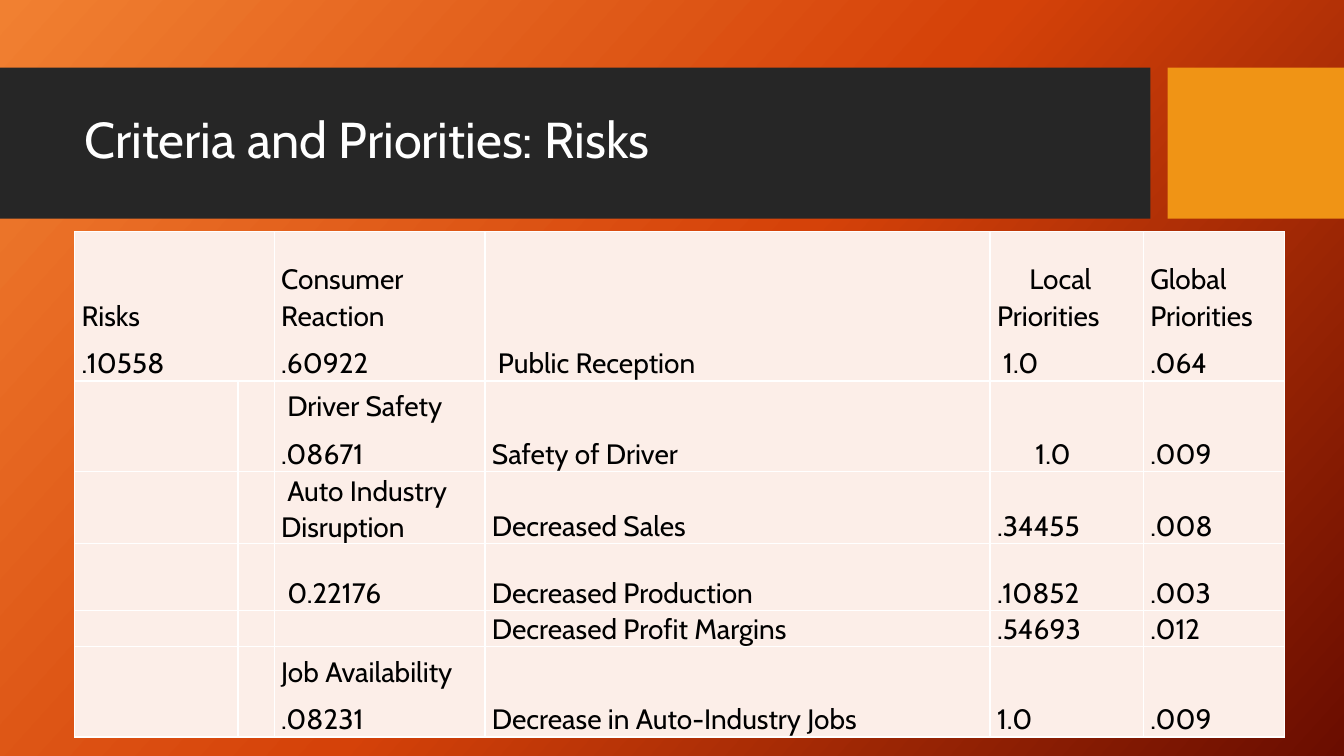
from copy import deepcopy
from dataclasses import dataclass

from lxml.etree import SubElement
from pptx import Presentation
from pptx.dml.color import RGBColor as RGB
from pptx.enum.shapes import MSO_SHAPE as SHAPE
from pptx.enum.text import MSO_ANCHOR as ANCHOR
from pptx.oxml.ns import qn
from pptx.util import Inches, Pt


@dataclass(frozen=True)
class Theme:
    """Colours, font and type sizes of the slide."""
    font: str = "Cabin"
    title_size: int = 36
    cell_size: int = 20
    band: str = "262626"
    accent: str = "F09415"
    cell: str = "FCEEE8"
    white: str = "FFFFFF"
    black: str = "000000"
    gradient: tuple = ((0, "F18031"), (0.5, "D54209"), (1, "6A0D00"))
    angle: int = 42


THEME = Theme()
COLUMNS = (1.62, 0.36, 2.09, 5.01, 1.52, 1.4)
ROWS = (1.48, 0.9, 0.68, 0.66, 0.35, 0.9)
CELLS = (
    (("Risks", ".10558"), (), ("Consumer Reaction", ".60922"), ("Public Reception",),
     ("Local Priorities", "1.0"), ("Global Priorities", ".064")),
    ((), (), ("Driver Safety", ".08671"), ("Safety of Driver",), ("1.0",), (".009",)),
    ((), (), ("Auto Industry Disruption",), ("Decreased Sales",), (".34455",), (".008",)),
    ((), (), ("0.22176",), ("Decreased Production",), (".10852",), (".003",)),
    ((), (), (), ("Decreased Profit Margins",), (".54693",), (".012",)),
    ((), (), ("Job Availability", ".08231"), ("Decrease in Auto-Industry Jobs",),
     ("1.0",), (".009",)),
)
INDENTS = {
    (0, 3): (0.06,),
    (0, 4): (0.32, 0.06),
    (1, 2): (0.06, 0),
    (1, 4): (0.38,),
    (2, 2): (0.06,),
    (3, 2): (0.06,),
}


def set_background(slide):
    """Fill the background with the theme's gradient."""
    fill = slide.background.fill
    fill.gradient()
    fill.gradient_angle = 360 - THEME.angle
    stops = slide.element.find(".//" + qn("a:gsLst"))
    stops.insert(1, deepcopy(stops[0]))
    for stop, (position, color) in zip(fill.gradient_stops, THEME.gradient):
        stop.position = position
        stop.color.rgb = RGB.from_string(color)


def add_block(slide, left, top, width, height, color):
    """Add a plain filled rectangle."""
    sp = slide.shapes.add_shape(SHAPE.RECTANGLE, Inches(left), Inches(top),
                                Inches(width), Inches(height))
    sp.shadow.inherit = False
    sp.fill.solid()
    sp.fill.fore_color.rgb = RGB.from_string(color)
    sp.line.fill.background()


def format_runs(p, size, color):
    """Set font, size and colour of a paragraph's runs."""
    for r in p.runs:
        r.font.name = THEME.font
        r.font.size = Pt(size)
        r.font.color.rgb = RGB.from_string(color)


def add_title(slide, text):
    """Add the slide title over the dark band."""
    sp = slide.shapes.add_textbox(Inches(0.74), Inches(0.82), Inches(10.51), Inches(1.18))
    tf = sp.text_frame
    tf.word_wrap = True
    tf.vertical_anchor = ANCHOR.MIDDLE
    tf.text = text
    p = tf.paragraphs[0]
    p.line_spacing = 0.9
    format_runs(p, THEME.title_size, THEME.white)


def style_cell(cell):
    """Give a cell its borders, fill, margins and anchor."""
    cell.margin_left = cell.margin_right = Inches(0.07)
    cell.margin_top = cell.margin_bottom = 0
    cell.vertical_anchor = ANCHOR.BOTTOM
    tc_pr = cell._tc.get_or_add_tcPr()
    for side in ("lnL", "lnR", "lnT", "lnB"):
        line = SubElement(tc_pr, qn("a:" + side), w=str(Pt(1)))
        SubElement(SubElement(line, qn("a:solidFill")), qn("a:srgbClr"), val=THEME.white)
    cell.fill.solid()
    cell.fill.fore_color.rgb = RGB.from_string(THEME.cell)


def fill_cell(cell, lines, indents):
    """Write the lines of a cell, each with its first-line indent."""
    cell.text_frame.text = "\n".join(lines)
    for p, indent in zip(cell.text_frame.paragraphs, indents):
        p.line_spacing = 1.07
        p.space_after = Pt(8)
        if indent:
            p._p.get_or_add_pPr().set("indent", str(Inches(indent)))
        format_runs(p, THEME.cell_size, THEME.black)


def add_priorities(slide):
    """Add the table of criteria and priorities."""
    table = slide.shapes.add_table(len(ROWS), len(COLUMNS), Inches(0.74), Inches(2.3),
                                   Inches(sum(COLUMNS)), Inches(sum(ROWS))).table
    table.first_row = table.horz_banding = False
    for column, width in zip(table.columns, COLUMNS):
        column.width = Inches(width)
    for row, height in zip(table.rows, ROWS):
        row.height = Inches(height)
    for i, row in enumerate(CELLS):
        for j, lines in enumerate(row):
            cell = table.cell(i, j)
            style_cell(cell)
            if lines:
                fill_cell(cell, lines, INDENTS.get((i, j), (0,) * len(lines)))
    table.cell(0, 0).merge(table.cell(0, 1))


def main():
    """Build the slide and save it."""
    prs = Presentation()
    prs.slide_width, prs.slide_height = Inches(13.33), Inches(7.5)
    slide = prs.slides.add_slide(prs.slide_layouts[6])
    set_background(slide)
    add_block(slide, 0, 0.67, 11.41, 1.5, THEME.band)
    add_block(slide, 11.58, 0.67, 1.75, 1.5, THEME.accent)
    add_title(slide, "Criteria and Priorities: Risks")
    add_priorities(slide)
    prs.save("out.pptx")


if __name__ == "__main__":
    main()
